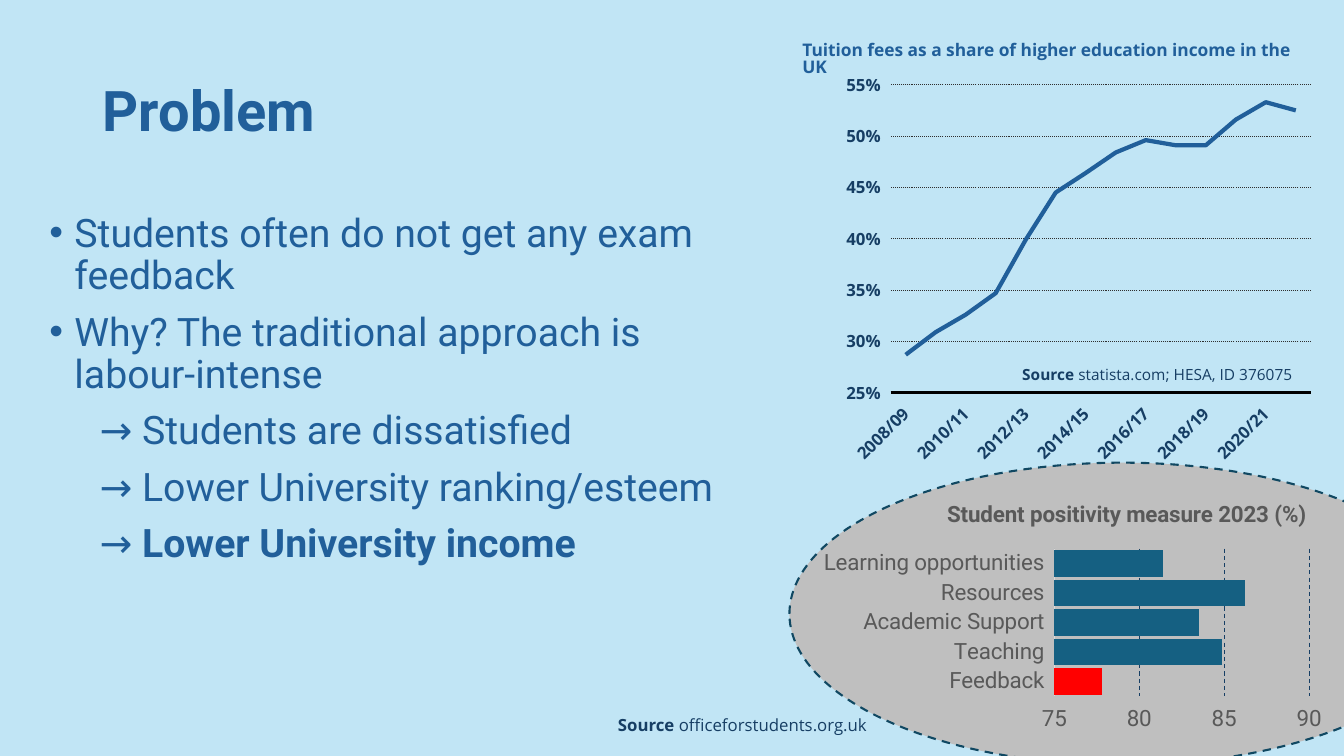
from lxml import etree
from pptx import Presentation
from pptx.chart.data import CategoryChartData
from pptx.dml.color import RGBColor
from pptx.enum.chart import XL_CHART_TYPE as CT, XL_TICK_LABEL_POSITION as TLP, XL_TICK_MARK as TM
from pptx.enum.dml import MSO_LINE_DASH_STYLE as DASH
from pptx.enum.shapes import MSO_SHAPE
from pptx.enum.text import MSO_ANCHOR as ANCHOR
from pptx.oxml.ns import qn
from pptx.util import Inches, Pt

SKY = RGBColor(0xC1, 0xE5, 0xF5)
BLUE = RGBColor(0x21, 0x5F, 0x9A)
NAVY = RGBColor(0x16, 0x3E, 0x64)
TEAL = RGBColor(0x15, 0x60, 0x82)
DARK_TEAL = RGBColor(0x10, 0x48, 0x62)
RED = RGBColor(0xFF, 0x00, 0x00)
BLACK = RGBColor(0x00, 0x00, 0x00)
CHARCOAL = RGBColor(0x2F, 0x2F, 0x2F)
TEXT_GRAY = RGBColor(0x59, 0x59, 0x59)
SILVER = RGBColor(0xBF, 0xBF, 0xBF)
PALE_GRAY = RGBColor(0xD9, 0xD9, 0xD9)

POINTS = [
    (True, [("Students often do not get any exam feedback", False)]),
    (True, [("Why? The traditional approach is labour-intense", False)]),
    (False, [("\t→ Students are dissatisfied", False)]),
    (False, [("\t→ Lower University ranking/esteem", False)]),
    (False, [("\t→ ", False), ("Lower University income", True)]),
]
POSITIVITY = {
    "Feedback": 77.8, "Teaching": 84.9, "Academic Support": 83.5,
    "Resources": 86.2, "Learning opportunities": 81.4,
}
FEE_SHARES = [0.287, 0.309, 0.326, 0.347, 0.399, 0.445, 0.464,
              0.484, 0.496, 0.491, 0.491, 0.516, 0.533, 0.525]
FEE_YEARS = [f"{y}/{(y + 1) % 100:02d}" for y in range(2008, 2008 + len(FEE_SHARES))]


def box(lengths):
    return [Inches(v) for v in lengths]


def style(font, name, size, color, bold=False):
    font.name, font.size, font.bold = name, Pt(size), bold
    font.color.rgb = color


def style_line(line, color, width, dash=None):
    line.color.rgb = color
    line.width = Pt(width)
    if dash:
        line.dash_style = dash


def add_runs(p, runs, name, size, color):
    for text, bold in runs:
        r = p.add_run()
        r.text = text
        style(r.font, name, size, color, bold)


def add_text(slide, at, runs, size, color, anchor=ANCHOR.TOP):
    tf = slide.shapes.add_textbox(*box(at)).text_frame
    tf.word_wrap = True
    tf.vertical_anchor = anchor
    add_runs(tf.paragraphs[0], runs, "Open Sans", size, color)
    return tf.paragraphs[0]


def add_title(slide, text):
    sp = slide.shapes.title
    sp.left, sp.top, sp.width, sp.height = box([0.92, 0.4, 2.66, 1.45])
    tf = sp.text_frame
    tf.text = text
    tf.vertical_anchor = ANCHOR.MIDDLE
    p = tf.paragraphs[0]
    p.line_spacing = 0.9
    p.alignment = 1
    style(p.runs[0].font, "Roboto", 40, BLUE, True)


def add_bullet(p):
    pPr = p._p.get_or_add_pPr()
    pPr.set("marL", str(Inches(0.25)))
    pPr.set("indent", str(-Inches(0.25)))
    etree.SubElement(pPr, qn("a:buFont")).set("typeface", "Arial")
    etree.SubElement(pPr, qn("a:buChar")).set("char", "•")


def add_points(slide, points):
    tf = slide.shapes.add_textbox(*box([0.39, 2.07, 7.18, 4.49])).text_frame
    tf.word_wrap = True
    for i, (bulleted, runs) in enumerate(points):
        p = tf.add_paragraph() if i else tf.paragraphs[0]
        if bulleted:
            add_bullet(p)
        p.line_spacing = 0.9
        p.space_before = Pt(10 if i else 0)
        add_runs(p, runs, "Roboto", 28, BLUE)


def add_ellipse(slide):
    sp = slide.shapes.add_shape(MSO_SHAPE.OVAL, *box([7.83, 4.59, 6.6, 3]))
    sp.shadow.inherit = False
    sp.fill.solid()
    sp.fill.fore_color.rgb = SILVER
    style_line(sp.line, DARK_TEAL, 1.5, DASH.DASH)


def set_layout(parent, inner=False, **fractions):
    layout = parent.find(qn("c:layout"))
    if layout is None:
        layout = etree.Element(qn("c:layout"))
        parent.insert(0, layout)
    manual = etree.SubElement(layout, qn("c:manualLayout"))
    settings = {"layoutTarget": "inner"} if inner else {}
    settings.update({"xMode": "edge", "yMode": "edge"}, **fractions)
    for tag, value in settings.items():
        etree.SubElement(manual, qn(f"c:{tag}")).set("val", str(value))


def add_chart(slide, kind, at, categories, values, plot_at):
    data = CategoryChartData()
    data.categories = categories
    data.add_series("Series 1", values)
    chart = slide.shapes.add_chart(kind, *box(at), data).chart
    chart.has_legend = False
    chart.has_title = False
    style(chart.font, "Roboto", 10, BLACK)
    chart.plots[0].vary_by_categories = False
    set_layout(chart._chartSpace.chart.plotArea, True, **dict(zip("xywh", plot_at)))
    return chart


def style_axes(chart, font, cat_line, limits, number_format, grid):
    cat, val = chart.category_axis, chart.value_axis
    for axis in (cat, val):
        axis.major_tick_mark = axis.minor_tick_mark = TM.NONE
        axis.tick_label_position = TLP.LOW
        style(axis.tick_labels.font, *font)
    cat.has_major_gridlines = False
    style_line(cat.format.line, *cat_line)
    val.minimum_scale, val.maximum_scale, val.major_unit = limits
    val.tick_labels.number_format = number_format
    val.tick_labels.number_format_is_linked = False
    val.format.line.fill.background()
    val.has_major_gridlines = True
    style_line(val.major_gridlines.format.line, *grid)


def add_positivity_chart(slide):
    chart = add_chart(slide, CT.BAR_CLUSTERED, [8.11, 4.46, 5.41, 2.86],
                      list(POSITIVITY), list(POSITIVITY.values()),
                      [0.434, 0.344, 0.467, 0.512])
    style_axes(chart, ("Roboto", 16, TEXT_GRAY), (PALE_GRAY, 0.75),
               (75, 90, 5), "General", (NAVY, 0.75, DASH.DASH))
    chart.plots[0].gap_width = 11
    series = chart.series[0]
    for fill, color in ((series.format.fill, TEAL),
                        (series.points[0].format.fill, RED)):
        fill.solid()
        fill.fore_color.rgb = color
    tf = chart.chart_title.text_frame
    tf.text = "Student positivity measure 2023 (%)"
    style(tf.paragraphs[0].runs[0].font, "Roboto", 16, TEXT_GRAY, True)
    set_layout(chart.chart_title._element, x=0.23, y=0.16)


def add_fees_chart(slide):
    chart = add_chart(slide, CT.LINE, [7.86, 0.68, 5.21, 3.93],
                      FEE_YEARS, FEE_SHARES, [0.187, 0.041, 0.8, 0.778])
    style_axes(chart, ("Open Sans", 12, NAVY, True), (BLACK, 2),
               (0.25, 0.55, 0.05), "#,##0%", (CHARCOAL, 0.75, DASH.ROUND_DOT))
    cat = chart.category_axis
    cat.tick_labels.font._element.getparent().getparent().getparent().find(
        qn("a:bodyPr")).set("rot", "-2700000")
    skip = etree.Element(qn("c:tickLblSkip"))
    skip.set("val", "2")
    cat._element.find(qn("c:noMultiLvlLbl")).addprevious(skip)
    series = chart.series[0]
    series.smooth = False
    style_line(series.format.line, BLUE, 3)


def main():
    prs = Presentation()
    prs.slide_width, prs.slide_height = Inches(13.33), Inches(7.5)
    s = prs.slides.add_slide(prs.slide_layouts[5])
    s.background.fill.solid()
    s.background.fill.fore_color.rgb = SKY
    add_ellipse(s)
    add_title(s, "Problem")
    add_points(s, POINTS)
    add_positivity_chart(s)
    add_text(s, [6.03, 6.9, 3.25, 0.44],
             [("Source", True), (" officeforstudents.org.uk", False)],
             12, NAVY, ANCHOR.BOTTOM)
    p = add_text(s, [7.86, 0.38, 5.21, 0.36],
                 [("Tuition fees as a share of higher education income in the UK", True)],
                 12.4, BLUE)
    p.line_spacing = 0.8
    add_fees_chart(s)
    add_text(s, [10.04, 3.5, 3.02, 0.36],
             [("Source ", True), ("statista.com; HESA, ID 376075", False)],
             11, NAVY, ANCHOR.BOTTOM)
    prs.save("out.pptx")


if __name__ == "__main__":
    main()
